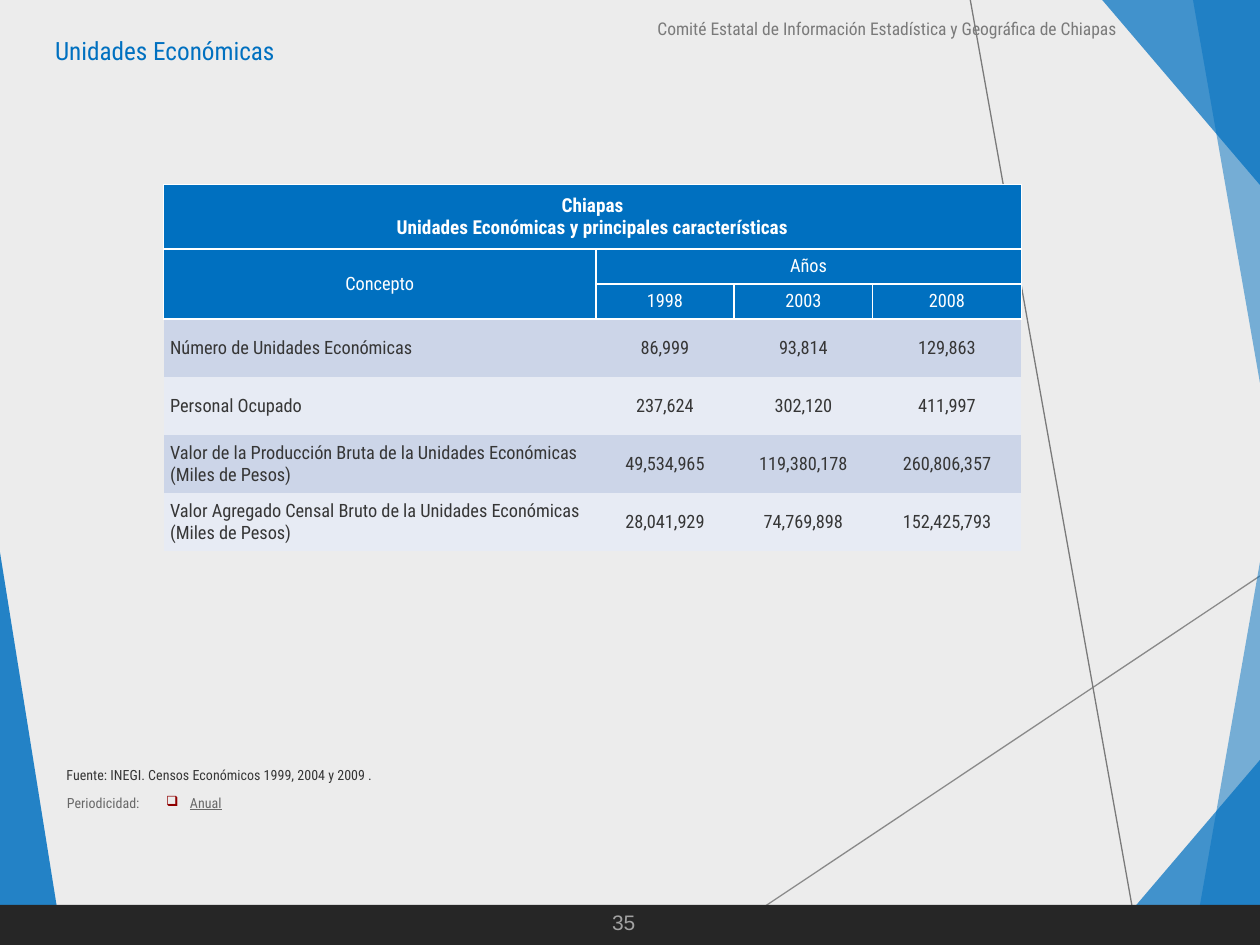
from lxml import etree
from pptx import Presentation
from pptx import util as u
from pptx.dml.color import RGBColor
from pptx.enum import shapes, text
from pptx.oxml.ns import qn

BLUE = RGBColor(0x00, 0x70, 0xC0)
PAPER = RGBColor(0xEC, 0xEC, 0xEC)
BAND_DARK = RGBColor(0xCC, 0xD5, 0xE8)
BAND_LIGHT = RGBColor(0xE7, 0xEB, 0xF4)
INK = RGBColor(0x36, 0x36, 0x36)
GREY = RGBColor(0x7A, 0x7A, 0x7A)
LINE_GREY = RGBColor(0x8A, 0x8A, 0x8A)
LABEL_GREY = RGBColor(0x68, 0x68, 0x68)
PAGE_GREY = RGBColor(0xA2, 0xA2, 0xA2)
BAR = RGBColor(0x26, 0x26, 0x26)
WHITE = RGBColor(0xFF, 0xFF, 0xFF)
BULLET_RED = RGBColor(0x90, 0x00, 0x00)

FONT = "Roboto Condensed"
WIDTH, HEIGHT = 25.4, 19.05
NO_STYLE = "{2D5ABB26-0587-4C30-8999-92F81FD0307C}"

COLUMNS = [8.71, 2.79, 2.79, 3.0]
ROWS = [1.3, 0.69, 0.71] + [1.17] * 4
HEADER_ROWS = 3
CELLS = [
    ["Chiapas\vUnidades Económicas y principales características", "", "", ""],
    ["Concepto", "Años", "", ""],
    ["", "1998", "2003", "2008"],
    ["Número de Unidades Económicas", "86,999", "93,814", "129,863"],
    ["Personal Ocupado", "237,624", "302,120", "411,997"],
    ["Valor de la Producción Bruta de la Unidades Económicas (Miles de Pesos)",
     "49,534,965", "119,380,178", "260,806,357"],
    ["Valor Agregado Censal Bruto de la Unidades Económicas (Miles de Pesos)",
     "28,041,929", "74,769,898", "152,425,793"],
]
MERGES = [((0, 0), (0, 3)), ((1, 0), (2, 0)), ((1, 1), (1, 3))]


def cm(*values):
    return [u.Cm(value) for value in values]


def style_runs(paragraph, size, color, font=FONT, bold=False, underline=None):
    for run in paragraph.runs:
        run.font.name = font
        run.font.size = u.Pt(size)
        run.font.bold = bold
        run.font.underline = underline
        run.font.color.rgb = color


def add_text(slide, box, words, size, color, align=text.PP_ALIGN.LEFT,
             font=FONT, wrap=True):
    frame = slide.shapes.add_textbox(*cm(*box)).text_frame
    frame.word_wrap = wrap
    frame.text = words
    frame.paragraphs[0].alignment = align
    style_runs(frame.paragraphs[0], size, color, font)


def add_block(slide, box, color):
    block = slide.shapes.add_shape(shapes.MSO_SHAPE.RECTANGLE, *cm(*box))
    block.shadow.inherit = False
    block.fill.solid()
    block.fill.fore_color.rgb = color
    block.line.fill.background()
    return block


def add_facet(slide, points, opacity):
    corners = [cm(*point) for point in points]
    builder = slide.shapes.build_freeform(*corners[0])
    builder.add_line_segments(corners[1:], close=True)
    facet = builder.convert_to_shape()
    facet.shadow.inherit = False
    facet.fill.solid()
    facet.fill.fore_color.rgb = BLUE
    facet.line.fill.background()
    tint = next(facet.fill._xPr.iter(qn("a:srgbClr")))
    etree.SubElement(tint, qn("a:alpha"), val=str(opacity * 1000))


def add_ray(slide, start, end, color):
    ray = slide.shapes.add_connector(
        shapes.MSO_CONNECTOR.STRAIGHT, *cm(*start, *end))
    ray.line.color.rgb = color
    ray.line.width = u.Pt(0.75)
    etree.SubElement(ray._element.spPr, qn("a:effectLst"))


def add_backdrop(slide, box):
    left, top, width, height = box
    right, bottom = left + width, top + height
    add_facet(slide, [(left, bottom - 7.92), (left + 1.27, bottom),
                      (left, bottom)], 85)
    add_ray(slide, (left + 14.25, bottom), (right, top + 11.61), LINE_GREY)
    add_ray(slide, (left + 19.56, top), (left + 22.96, bottom), GREY)

    # Mirrored facets in the two right-hand corners
    for edge, inward in ((bottom, -1), (top, 1)):
        for reach, rise, opacity in ((3.18, 3.73, 72), (1.35, 7.72, 50)):
            add_facet(slide, [(right - reach, edge),
                              (right, edge + inward * rise),
                              (right, edge)], opacity)


def add_footer(slide, box):
    left, top, width, height = box
    add_block(slide, box, BAR)
    add_text(slide, (left + 12.09, top - 0.03, 0.99, 0.76), "35", 12,
             PAGE_GREY, font="Arial", wrap=False)


def add_heading(slide, box):
    left, top, width, height = box
    add_text(slide, (left + 10.44, top, width - 10.44, 0.69),
             "Comité Estatal de Información Estadística y Geográfica de Chiapas",
             10, GREY, text.PP_ALIGN.RIGHT)
    add_text(slide, (left, top + 0.35, 9.96, 0.76),
             "Unidades Económicas", 14.4, BLUE)


def add_borders(cell, color):
    properties = cell._tc.get_or_add_tcPr()
    for position, side in enumerate(("lnL", "lnR", "lnT", "lnB")):
        border = etree.Element(qn(f"a:{side}"), w=str(u.Pt(1)))
        fill = etree.SubElement(border, qn("a:solidFill"))
        etree.SubElement(fill, qn("a:srgbClr"), val=str(color))
        properties.insert(position, border)


def add_units_table(slide, box):
    frame = slide.shapes.add_table(len(ROWS), len(COLUMNS), *cm(*box))
    table = frame.table
    table._tbl.tblPr.find(qn("a:tableStyleId")).text = NO_STYLE
    for column, width in zip(table.columns, COLUMNS):
        column.width = u.Cm(width)
    for row, height in zip(table.rows, ROWS):
        row.height = u.Cm(height)
    for first, last in MERGES:
        table.cell(*first).merge(table.cell(*last))

    for r, row in enumerate(CELLS):
        header = r < HEADER_ROWS
        band = (BAND_DARK, BAND_LIGHT)[(r - HEADER_ROWS) % 2]
        for c, words in enumerate(row):
            cell = table.cell(r, c)
            cell.fill.solid()
            cell.fill.fore_color.rgb = BLUE if header else band
            if header:
                add_borders(cell, WHITE)
            cell.vertical_anchor = text.MSO_ANCHOR.MIDDLE
            cell.margin_left = cell.margin_right = u.Cm(0.13)
            cell.margin_top = cell.margin_bottom = u.Cm(0.13)
            cell.text_frame.text = words
            paragraph = cell.text_frame.paragraphs[0]
            if header or c:
                paragraph.alignment = text.PP_ALIGN.CENTER
            style_runs(paragraph, 10.5 if r else 11,
                       WHITE if header else INK, bold=r == 0)


def add_label(slide, box, words, bullet=None):
    label = add_block(slide, box, PAPER)
    frame = label.text_frame
    frame.margin_left = frame.margin_right = 0
    frame.margin_top = frame.margin_bottom = 0
    frame.word_wrap = False
    frame.text = words
    paragraph = frame.paragraphs[0]
    paragraph.alignment = text.PP_ALIGN.LEFT
    if bullet:
        properties = paragraph._p.get_or_add_pPr()
        indent = u.Cm(0.48)
        properties.set("marL", str(indent))
        properties.set("indent", str(-indent))
        tint = etree.SubElement(properties, qn("a:buClr"))
        etree.SubElement(tint, qn("a:srgbClr"), val=str(BULLET_RED))
        etree.SubElement(properties, qn("a:buChar"), char=bullet)
    style_runs(paragraph, 8, LABEL_GREY, underline=True if bullet else None)


def add_source(slide, box):
    left, top, width, height = box
    add_text(slide, (left, top, width, 0.61),
             "Fuente: INEGI. Censos Económicos 1999, 2004 y 2009 .", 8, INK)
    add_label(slide, (left + 0.26, top + 0.7, 1.7, 0.33), "Periodicidad:")
    add_label(slide, (left + 2.26, top + 0.7, 1.22, 0.33), "Anual", "❑")


def main():
    deck = Presentation()
    deck.slide_width, deck.slide_height = cm(WIDTH, HEIGHT)
    slide = deck.slides.add_slide(deck.slide_layouts[6])
    slide.background.fill.solid()
    slide.background.fill.fore_color.rgb = PAPER

    add_backdrop(slide, (0, 0, WIDTH, HEIGHT))
    add_footer(slide, (0, 18.24, WIDTH, 0.81))
    add_heading(slide, (0.86, 0.23, 21.89, 1.11))
    add_units_table(slide, (3.3, 3.72, sum(COLUMNS), sum(ROWS)))
    add_source(slide, (1.09, 15.32, 9.02, 1.03))
    deck.save("out.pptx")


if __name__ == "__main__":
    main()
